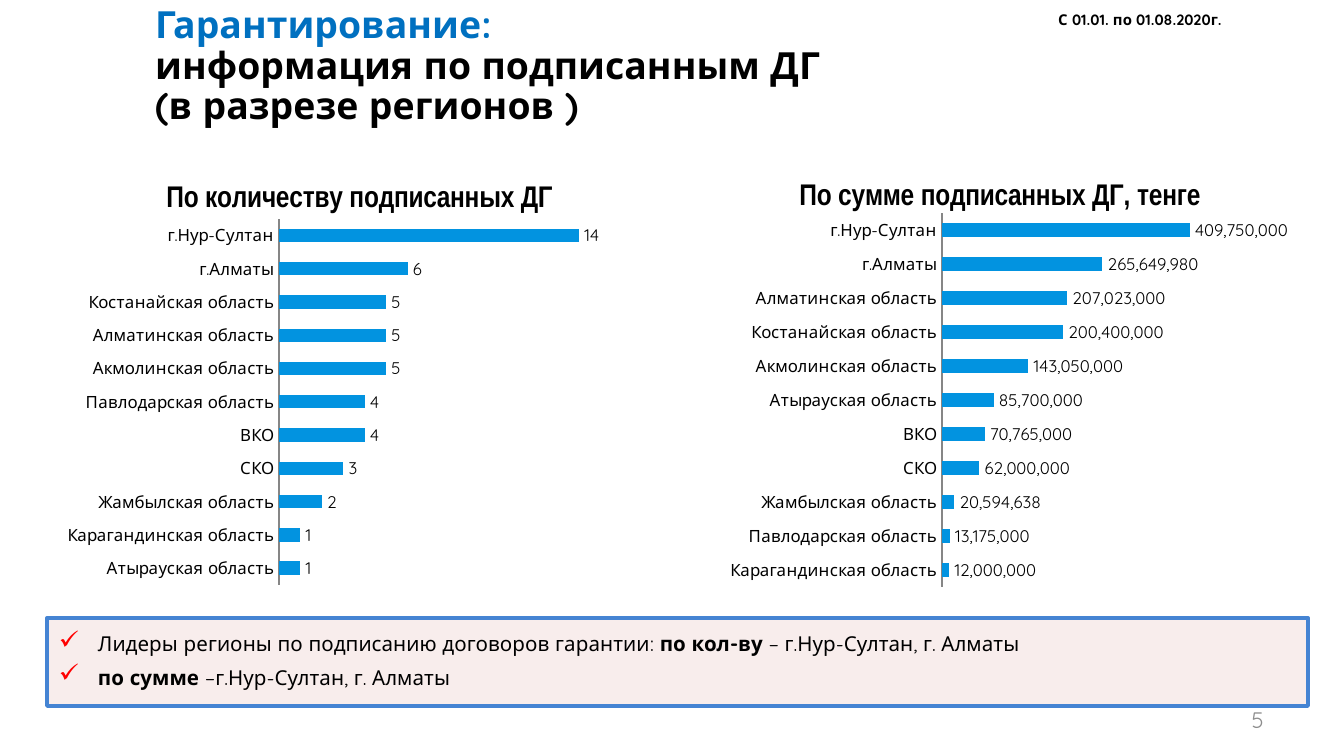
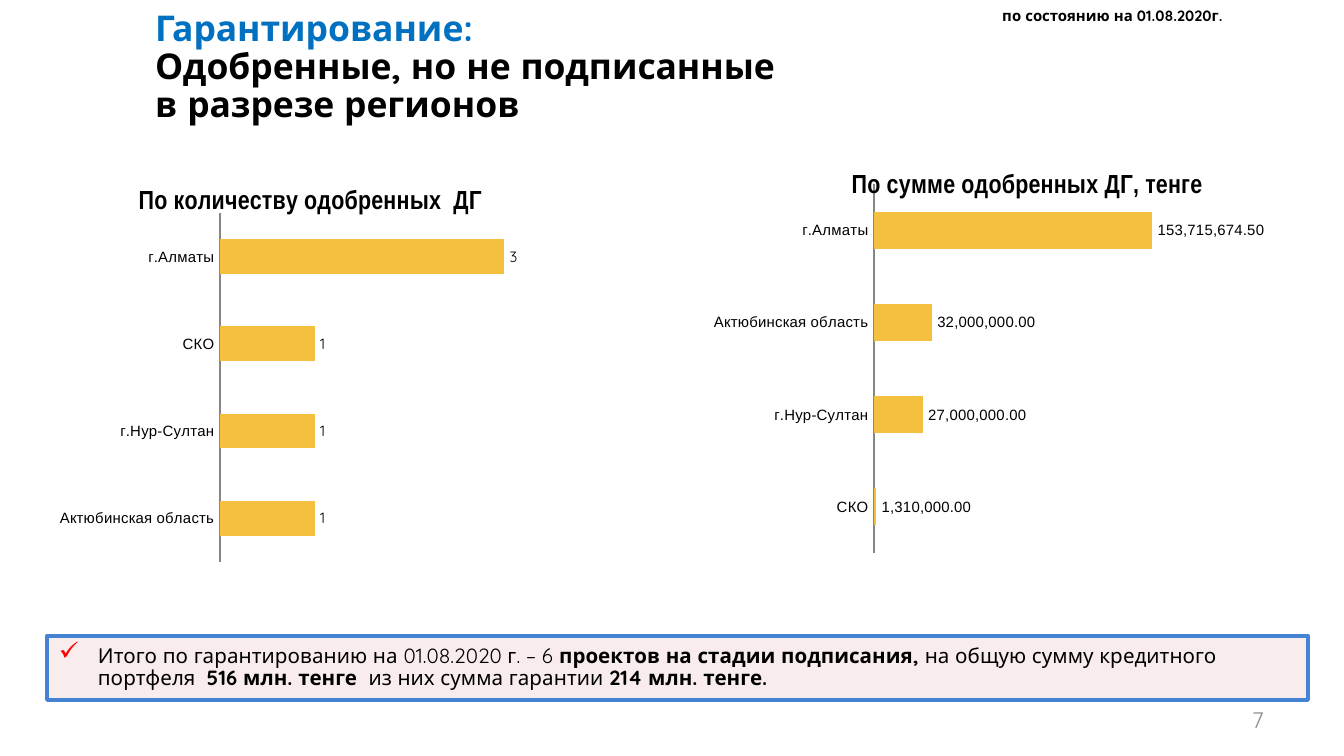
from pptx import Presentation
from pptx.chart.data import CategoryChartData
from pptx.dml.color import RGBColor
from pptx.enum.chart import XL_CHART_TYPE, XL_LABEL_POSITION, XL_TICK_MARK
from pptx.enum.shapes import MSO_SHAPE
from pptx.enum.text import MSO_ANCHOR, PP_ALIGN
from pptx.oxml import parse_xml
from pptx.oxml.ns import nsdecls, qn
from pptx.util import Emu, Pt

BAR = XL_CHART_TYPE.BAR_CLUSTERED
OUTSIDE = XL_LABEL_POSITION.OUTSIDE_END
NO_TICK = XL_TICK_MARK.NONE
MIDDLE = MSO_ANCHOR.MIDDLE
RIGHT = PP_ALIGN.RIGHT

BODY, NARROW, PLAIN = "Quicksand", "Arial Narrow", "Arial"
BLACK, HEADING, PAGE_GREY, AXIS_GREY = "000000", "0070C0", "8C8C8C", "868686"
BAND_FILL, BAND_LINE, CHECK = "F2DCDB", "4584D3", "FF0000"

SLIDES = [
    {
        "heading": ["Гарантирование:", "информация по подписанным ДГ", "(в разрезе регионов )"],
        "heading_top": 0, "heading_size": 20,
        "date": "С 01.01. по 01.08.2020г.", "date_at": (1045, 4),
        "page": "5",
        "bar_color": "0293E0", "title_size": 16, "axis_font": (BODY, 9),
        "band": (618, 88),
        "findings": [
            [("Лидеры регионы по подписанию договоров гарантии: ", False),
             ("по кол-ву ", True), ("– г.Нур-Султан, г. Алматы", False)],
            [("по сумме ", True), ("–г.Нур-Султан, г. Алматы", False)],
        ],
        "charts": [
            {
                "title": "По количеству подписанных ДГ", "title_at": (161, 194),
                "frame": (47, 159, 614, 438), "plot": (279, 219, 343, 366),
                "top_value": 16, "format": "General", "label_font": BODY,
                "data": [
                    ("Атырауская область", 1), ("Карагандинская область", 1),
                    ("Жамбылская область", 2), ("СКО", 3), ("ВКО", 4),
                    ("Павлодарская область", 4), ("Акмолинская область", 5),
                    ("Алматинская область", 5), ("Костанайская область", 5),
                    ("г.Алматы", 6), ("г.Нур-Султан", 14),
                ],
            },
            {
                "title": "По сумме подписанных ДГ, тенге", "title_at": (794, 192),
                "frame": (683, 156, 625, 446), "plot": (942, 213, 272, 374),
                "top_value": 450000000, "format": "#,##0", "label_font": BODY,
                "data": [
                    ("Карагандинская область", 12000000), ("Павлодарская область", 13175000),
                    ("Жамбылская область", 20594638), ("СКО", 62000000), ("ВКО", 70765000),
                    ("Атырауская область", 85700000), ("Акмолинская область", 143050000),
                    ("Костанайская область", 200400000), ("Алматинская область", 207023000),
                    ("г.Алматы", 265649980), ("г.Нур-Султан", 409750000),
                ],
            },
        ],
    },
    {
        "heading": ["Гарантирование:", "Одобренные, но не подписанные", "в разрезе регионов"],
        "heading_top": 4, "heading_size": 19,
        "date": "по состоянию на 01.08.2020г.", "date_at": (989, 0),
        "page": "7",
        "bar_color": "F5C040", "title_size": 14, "axis_font": (PLAIN, 8),
        "band": (636, 64),
        "findings": [
            [("Итого по гарантированию на 01.08.2020 г. – 6", False),
             (" проектов на стадии подписания, ", True),
             ("на общую сумму кредитного портфеля  ", False),
             ("516 млн. тенге  ", True), ("из них сумма гарантии ", False),
             ("214 млн. тенге.", True)],
        ],
        "charts": [
            {
                "title": "По количеству одобренных  ДГ", "title_at": (134, 196),
                "frame": (38, 161, 538, 418), "plot": (220, 213, 332, 349),
                "top_value": 3.5, "format": "General", "label_font": BODY,
                "data": [("Актюбинская область", 1), ("г.Нур-Султан", 1),
                         ("СКО", 1), ("г.Алматы", 3)],
            },
            {
                "title": "По сумме одобренных ДГ, тенге", "title_at": (847, 180),
                "frame": (663, 153, 677, 435), "plot": (874, 184, 326, 369),
                "top_value": 180000000, "format": "#,##0.00", "label_font": PLAIN,
                "data": [("СКО", 1310000), ("г.Нур-Султан", 27000000),
                         ("Актюбинская область", 32000000), ("г.Алматы", 153715674.5)],
            },
        ],
    },
]


def px(length):
    return Emu(round(length * 914400 / 134.4))


def color(value):
    return RGBColor.from_string(value)


def style(font, size, tint=BLACK, bold=False, name=BODY):
    font.name, font.size, font.bold = name, Pt(size), bold
    font.color.rgb = color(tint)


def add_text(slide, box, lines, size, tint=BLACK, bold=False):
    frame = slide.shapes.add_textbox(*map(px, box)).text_frame
    frame.word_wrap = True
    frame.text = "\n".join(lines)
    for paragraph in frame.paragraphs:
        style(paragraph.runs[0].font, size, tint, bold)
    return frame


def add_heading(slide, page):
    frame = add_text(slide, (142, page["heading_top"], 942, 142), page["heading"],
                     page["heading_size"], bold=True)
    for paragraph in frame.paragraphs:
        paragraph.line_spacing = 0.9
    frame.paragraphs[0].runs[0].font.color.rgb = color(HEADING)


def add_page_number(slide, number):
    frame = add_text(slide, (964, 700, 313, 40), [number], 12, PAGE_GREY)
    frame.vertical_anchor = MIDDLE
    frame.paragraphs[0].alignment = RIGHT


def add_check(paragraph):
    props = paragraph._p.get_or_add_pPr()
    props.set("marL", str(px(40)))
    props.set("indent", str(px(-39)))
    for bullet in (f'<a:buClr {nsdecls("a")}><a:srgbClr val="{CHECK}"/></a:buClr>',
                   f'<a:buSzPct {nsdecls("a")} val="125000"/>',
                   f'<a:buChar {nsdecls("a")} char="✓"/>'):
        props.append(parse_xml(bullet))


def add_findings(slide, top, height, findings):
    band = slide.shapes.add_shape(MSO_SHAPE.RECTANGLE, *map(px, (47, top, 1261, height)))
    band.shadow.inherit = False
    band.fill.solid()
    band.fill.fore_color.rgb = color(BAND_FILL)
    tint = band.fill._xPr.find(qn("a:solidFill"))[0]
    tint.append(parse_xml(f'<a:alpha {nsdecls("a")} val="50000"/>'))
    band.line.color.rgb = color(BAND_LINE)
    band.line.width = Pt(2)

    frame = band.text_frame
    frame.word_wrap = True
    frame.vertical_anchor = MIDDLE
    frame.margin_left = frame.margin_right = px(11)
    frame.margin_top = frame.margin_bottom = px(5)
    for index, finding in enumerate(findings):
        paragraph = frame.add_paragraph() if index else frame.paragraphs[0]
        add_check(paragraph)
        paragraph.alignment = PP_ALIGN.LEFT
        paragraph.line_spacing = 0.9
        paragraph.space_after = Pt(6)
        for words, bold in finding:
            run = paragraph.add_run()
            run.text = words
            style(run.font, 11, bold=bold)


def set_layout(parent, index, frame, place, inner=False):
    """Place a chart part, given in slide px, as fractions of the chart frame."""
    old = parent.find(qn("c:layout"))
    if old is not None:
        parent.remove(old)
    left, top, width, height = frame
    fractions = [(place[0] - left) / width, (place[1] - top) / height]
    fractions += [size / whole for size, whole in zip(place[2:], (width, height))]
    target = '<c:layoutTarget val="inner"/>' if inner else ""
    modes = '<c:xMode val="edge"/><c:yMode val="edge"/>'
    values = "".join(f'<c:{key} val="{value:.4f}"/>' for key, value in zip("xywh", fractions))
    parent.insert(index, parse_xml(
        f'<c:layout {nsdecls("c")}><c:manualLayout>{target}{modes}{values}'
        '</c:manualLayout></c:layout>'))


def add_bars(slide, page, bars):
    table = CategoryChartData()
    table.categories = [region for region, _ in bars["data"]]
    table.add_series("Series 1", [value for _, value in bars["data"]])
    chart = slide.shapes.add_chart(BAR, *map(px, bars["frame"]), table).chart
    style(chart.font, 10)
    chart.has_legend = False

    # Title, placed by its left edge and the middle of its line
    heading = chart.chart_title
    heading.text_frame.text = bars["title"]
    style(heading.text_frame.paragraphs[0].runs[0].font, page["title_size"],
          bold=True, name=NARROW)
    heading.include_in_layout = False
    left, middle = bars["title_at"]
    set_layout(heading._element, 1, bars["frame"], (left, middle - page["title_size"]))
    set_layout(chart._chartSpace.find(".//" + qn("c:plotArea")), 0,
               bars["frame"], bars["plot"], inner=True)

    # Axes
    axis_name, axis_size = page["axis_font"]
    regions, values = chart.category_axis, chart.value_axis
    regions.major_tick_mark = regions.minor_tick_mark = NO_TICK
    regions.has_major_gridlines = False
    regions.format.line.color.rgb = color(AXIS_GREY)
    regions.format.line.width = Pt(0.75)
    style(regions.tick_labels.font, axis_size, name=axis_name)
    values.visible = values.has_major_gridlines = False
    values.minimum_scale, values.maximum_scale = 0, bars["top_value"]

    # Bars and their values
    plot = chart.plots[0]
    plot.gap_width = 150
    plot.vary_by_categories = False
    series = plot.series[0]
    series.format.fill.solid()
    series.format.fill.fore_color.rgb = color(page["bar_color"])
    labels = series.data_labels
    labels.show_value = True
    labels.position = OUTSIDE
    labels.number_format = bars["format"]
    labels.number_format_is_linked = False
    style(labels.font, axis_size, name=bars["label_font"])


def main():
    deck = Presentation()
    deck.slide_width, deck.slide_height = px(1344), px(756)
    for page in SLIDES:
        slide = deck.slides.add_slide(deck.slide_layouts[6])
        add_page_number(slide, page["page"])
        add_heading(slide, page)
        add_text(slide, (*page["date_at"], 306, 32), [page["date"]], 8, bold=True)
        add_findings(slide, *page["band"], page["findings"])
        for bars in page["charts"]:
            add_bars(slide, page, bars)
    deck.save("out.pptx")


if __name__ == "__main__":
    main()
